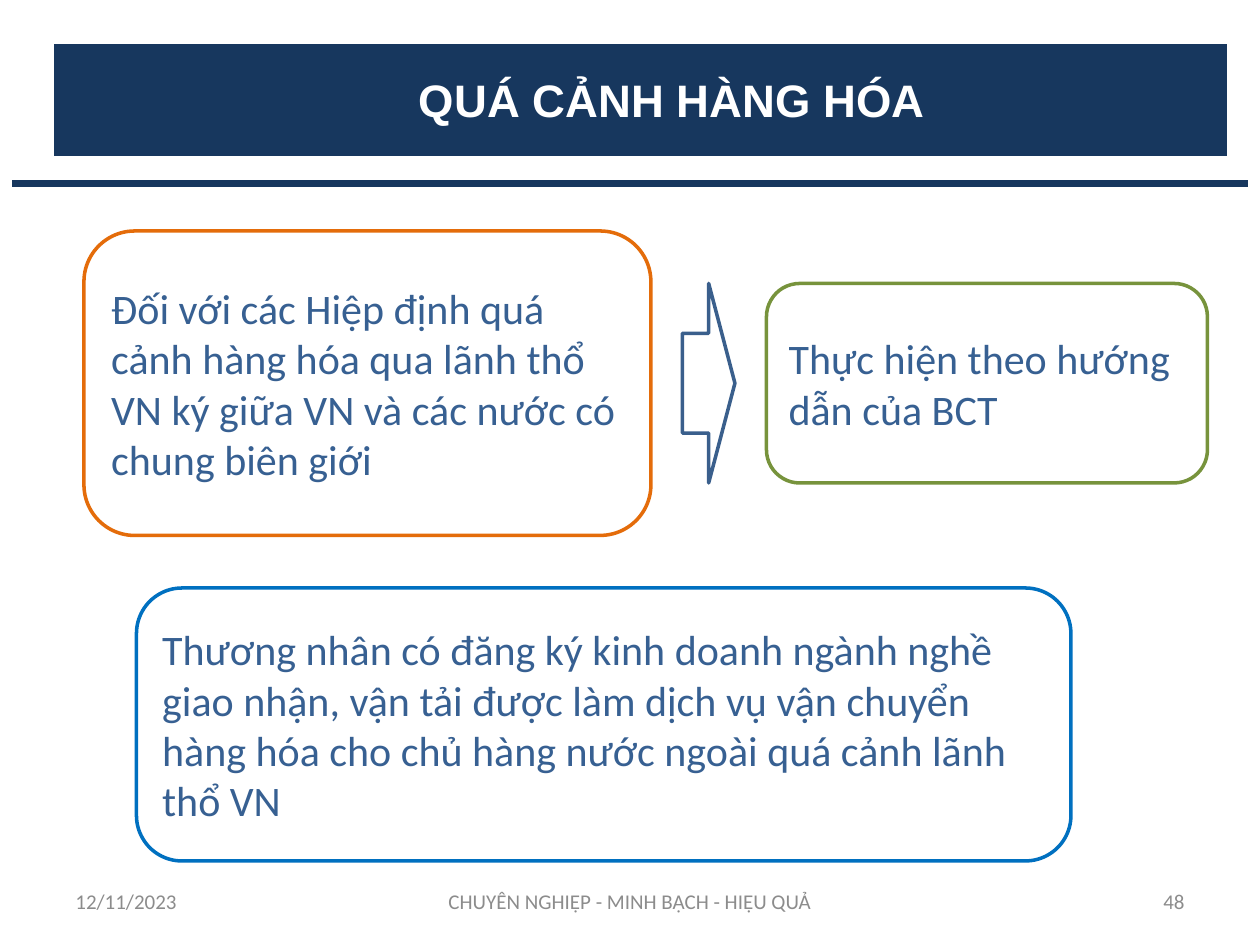
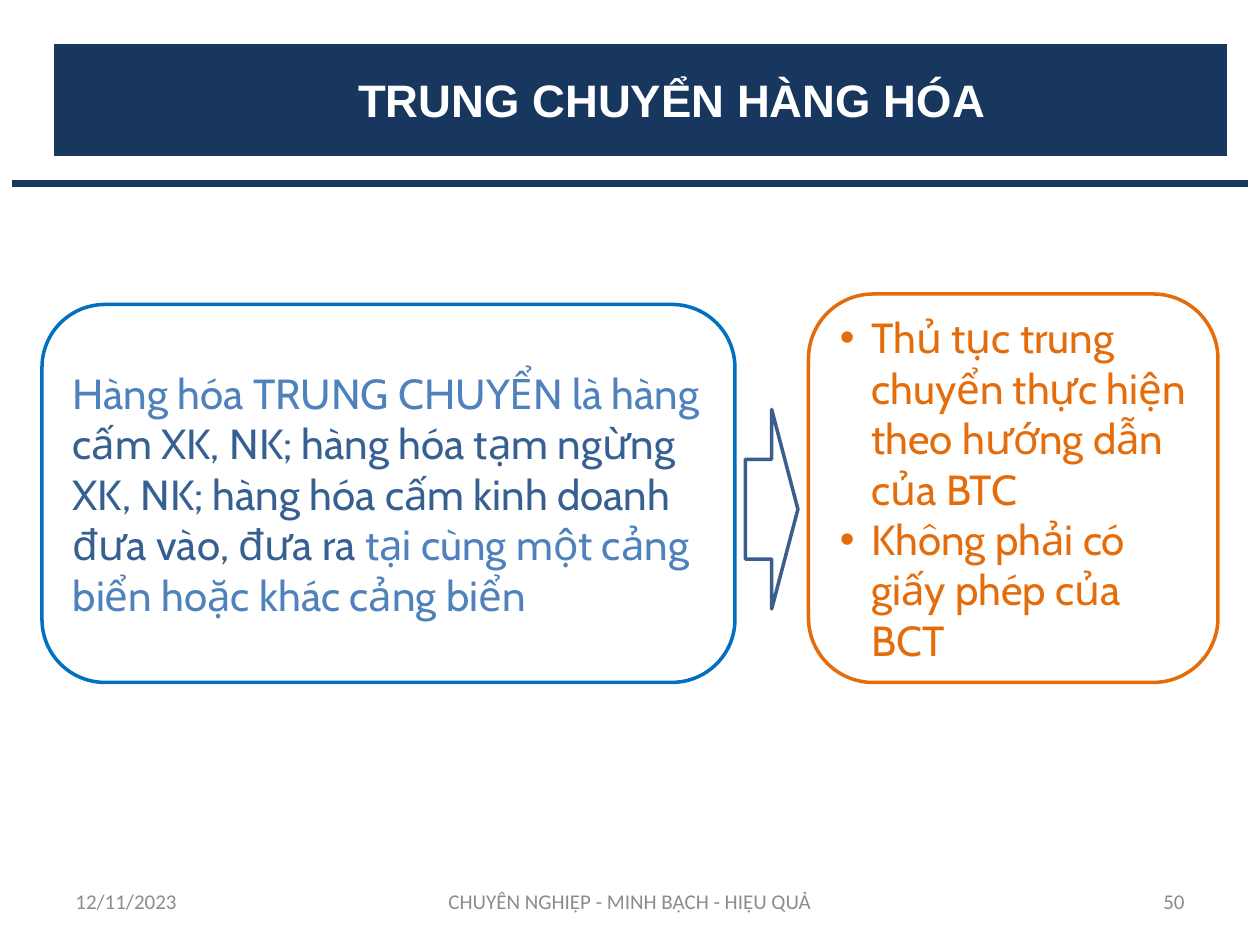
"""Build two slides on goods in transit and goods in transshipment."""
from dataclasses import dataclass

from lxml import etree
from pptx import Presentation
from pptx.dml.color import RGBColor
from pptx.enum.shapes import MSO_SHAPE
from pptx.enum.text import MSO_ANCHOR, PP_ALIGN
from pptx.oxml.ns import qn
from pptx.util import Inches, Pt

RECTANGLE = MSO_SHAPE.RECTANGLE
ROUNDED = MSO_SHAPE.ROUNDED_RECTANGLE
ARROW = MSO_SHAPE.RIGHT_ARROW
MIDDLE = MSO_ANCHOR.MIDDLE
LEFT, CENTER, RIGHT = PP_ALIGN.LEFT, PP_ALIGN.CENTER, PP_ALIGN.RIGHT

SLIDE_WIDTH, SLIDE_HEIGHT = Inches(10), Inches(7.5)
COLUMNS, ROWS = 120, 90
BLANK_LAYOUT = 6
DATE = "12/11/2023"
MOTTO = "CHUYÊN NGHIỆP - MINH BẠCH - HIỆU QUẢ"


@dataclass(frozen=True)
class Theme:
    """Colours, fonts and sizes shared by the slides."""

    navy: str = "17375E"
    white: str = "FFFFFF"
    gray: str = "8C8C8C"
    text: str = "376092"
    highlight: str = "4F81BD"
    orange: str = "E46C0A"
    green: str = "77933C"
    blue: str = "0070C0"
    arrow: str = "3A5F8C"
    title_font: str = "Arial"
    body_font: str = "Calibri"
    accent_font: str = "Cabin"
    title_size: int = 26
    body_size: int = 24
    footer_size: int = 12
    line_width: int = 2


THEME = Theme()


def set_attributes(target, values):
    """Set each named value on the target."""
    for name, value in values.items():
        setattr(target, name, value)


def place(column, row, width, height):
    """Turn grid columns and rows into slide lengths."""
    column_width, row_height = SLIDE_WIDTH / COLUMNS, SLIDE_HEIGHT / ROWS
    return (round(column * column_width), round(row * row_height),
            round(width * column_width), round(height * row_height))


def add_panel(slide, kind, cells, fill, line):
    """Add a filled and outlined shape without shadow."""
    shape = slide.shapes.add_shape(kind, *place(*cells))
    shape.shadow.inherit = False
    shape.fill.solid()
    shape.fill.fore_color.rgb = RGBColor.from_string(fill)
    shape.line.color.rgb = RGBColor.from_string(line)
    shape.line.width = Pt(THEME.line_width)
    return shape


def write(shape, paragraphs, font, size, align=LEFT, bold=False):
    """Write paragraphs, each a list of text and colour pairs."""
    frame = shape.text_frame
    set_attributes(frame, {"word_wrap": True, "vertical_anchor": MIDDLE})
    for index, runs in enumerate(paragraphs):
        paragraph = frame.add_paragraph() if index else frame.paragraphs[0]
        paragraph.alignment = align
        for text, color in runs:
            run = paragraph.add_run()
            run.text = text
            set_attributes(run.font, {"name": font, "size": Pt(size), "bold": bold})
            run.font.color.rgb = RGBColor.from_string(color)
    return frame.paragraphs


def indent(paragraph, margin, first_line=0):
    """Set the left margin and first-line indent in inches."""
    properties = paragraph._p.get_or_add_pPr()
    properties.set("marL", str(Inches(margin)))
    properties.set("indent", str(Inches(first_line)))
    return properties


def add_bullet(paragraph):
    """Give a paragraph a hanging round bullet."""
    properties = indent(paragraph, 0.25, -0.25)
    etree.SubElement(properties, qn("a:buFont")).set("typeface", "Arial")
    etree.SubElement(properties, qn("a:buChar")).set("char", "•")


def add_box(slide, cells, line, paragraphs, font=THEME.body_font):
    """Add a rounded text box and return its paragraphs."""
    shape = add_panel(slide, ROUNDED, cells, THEME.white, line)
    return write(shape, paragraphs, font, THEME.body_size)


def add_arrow(slide, column, row):
    """Add the outlined arrow that leads to the right-hand box."""
    add_panel(slide, ARROW, (column, row, 5, 19), THEME.white, THEME.arrow)


def add_footer(slide, column, width, text, align):
    """Add one footer text."""
    shape = slide.shapes.add_textbox(*place(column, 83.4, width, 4.8))
    write(shape, [[(text, THEME.gray)]], THEME.body_font, THEME.footer_size, align)


def add_base_slide(presentation, title, number):
    """Add a slide with its rule, title band and footers."""
    slide = presentation.slides.add_slide(presentation.slide_layouts[BLANK_LAYOUT])
    add_panel(slide, RECTANGLE, (1, 17, 118, 1), THEME.navy, THEME.white)
    band = add_panel(slide, RECTANGLE, (5, 4, 112, 11), THEME.navy, THEME.white)
    heading = write(band, [[(title, THEME.white)]], THEME.title_font,
                    THEME.title_size, CENTER, bold=True)[0]
    heading.level = 1
    indent(heading, 0.5)
    add_footer(slide, 6, 28, DATE, LEFT)
    add_footer(slide, 86, 28, number, RIGHT)
    add_footer(slide, 41, 38, MOTTO, CENTER)
    return slide


def build_transit(presentation):
    """Build the slide on goods in transit."""
    slide = add_base_slide(presentation, "QUÁ CẢNH HÀNG HÓA", "48")
    boxes = [
        ((8, 22, 54, 29), THEME.orange,
         "Đối với các Hiệp định quá cảnh hàng hóa qua lãnh thổ VN ký giữa VN "
         "và các nước có chung biên giới"),
        ((73, 27, 42, 19), THEME.green, "Thực hiện theo hướng dẫn của BCT"),
        ((13, 56, 89, 26), THEME.blue,
         "Thương nhân có đăng ký kinh doanh ngành nghề giao nhận, vận tải được "
         "làm dịch vụ vận chuyển hàng hóa cho chủ hàng nước ngoài quá cảnh "
         "lãnh thổ VN"),
    ]
    for cells, line, text in boxes:
        add_box(slide, cells, line, [[(text, THEME.text)]])
    add_arrow(slide, 65, 27)


def build_transshipment(presentation):
    """Build the slide on goods in transshipment."""
    slide = add_base_slide(presentation, "TRUNG CHUYỂN HÀNG HÓA", "50")
    definition = [
        ("Hàng hóa TRUNG CHUYỂN là hàng ", THEME.highlight),
        ("cấm XK, NK; hàng hóa tạm ngừng XK, NK; hàng hóa cấm kinh doanh "
         "đưa vào, đưa ra ", THEME.text),
        ("tại cùng một cảng biển hoặc khác cảng biển", THEME.highlight),
    ]
    rules = ["Thủ tục trung chuyển thực hiện theo hướng dẫn của BTC",
             "Không phải có giấy phép của BCT"]
    add_box(slide, (4, 29, 66, 36), THEME.blue, [definition], THEME.accent_font)
    rule_paragraphs = add_box(slide, (77, 28, 39, 37), THEME.orange,
                              [[(rule, THEME.orange)] for rule in rules],
                              THEME.accent_font)
    for paragraph in rule_paragraphs:
        add_bullet(paragraph)
    add_arrow(slide, 71, 39)


def main():
    """Build and save the presentation."""
    presentation = Presentation()
    set_attributes(presentation, {"slide_width": SLIDE_WIDTH,
                                  "slide_height": SLIDE_HEIGHT})
    build_transit(presentation)
    build_transshipment(presentation)
    presentation.save("out.pptx")


if __name__ == "__main__":
    main()
